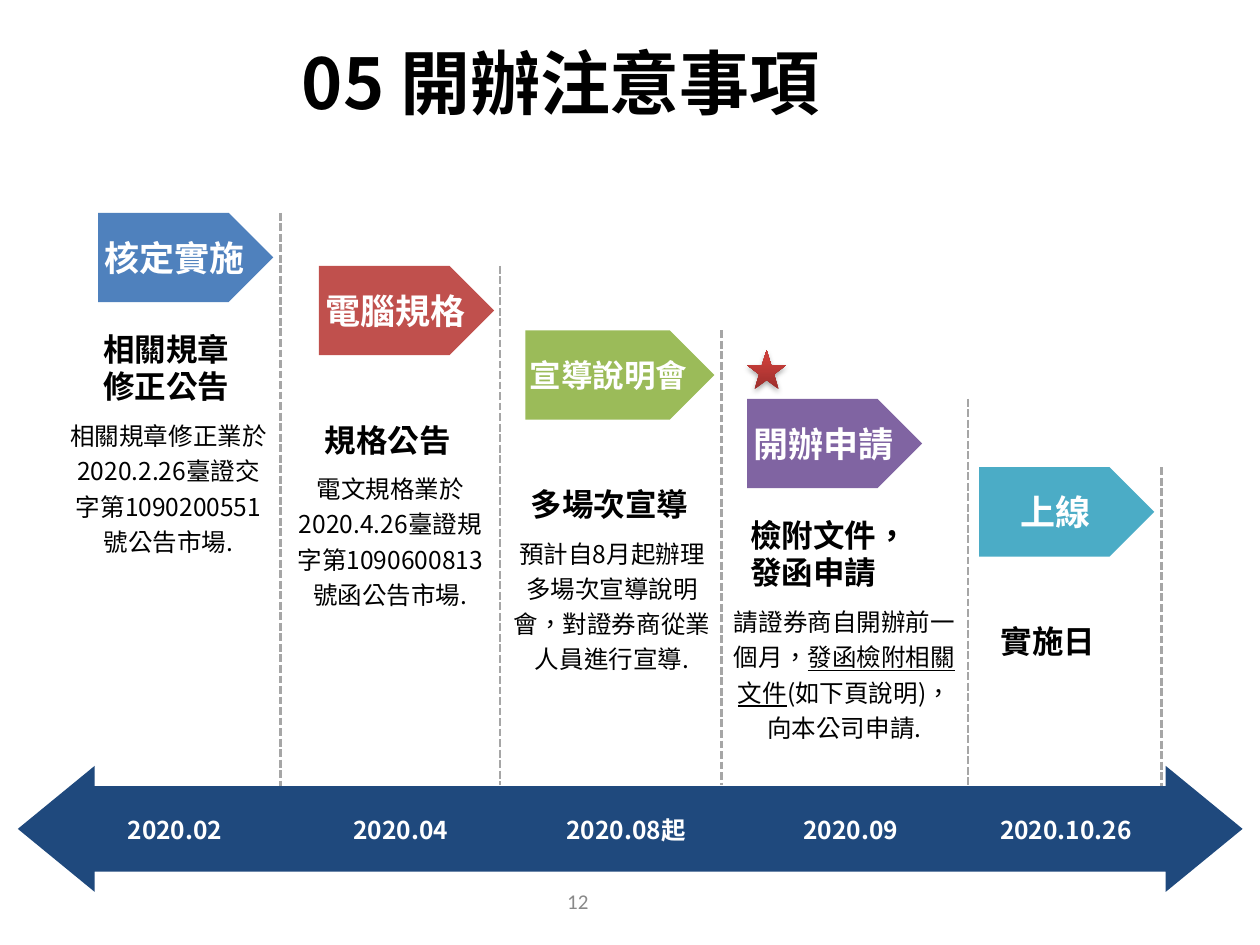
from dataclasses import dataclass, replace

from lxml.etree import SubElement
from pptx import Presentation
from pptx.dml.color import RGBColor
from pptx.enum.dml import MSO_LINE
from pptx.enum.lang import MSO_LANGUAGE_ID
from pptx.enum.shapes import MSO_CONNECTOR, MSO_SHAPE
from pptx.enum.text import MSO_ANCHOR, MSO_AUTO_SIZE, PP_ALIGN
from pptx.oxml.ns import qn
from pptx.util import Cm, Pt

CJK_FONT = "Noto Sans CJK SC"
WHITE, BLACK, NAVY, GREY = "FFFFFF", "000000", "1F497D", "A6A6A6"
ARROW_HEIGHT = 1.8
HEADING_HEIGHT = 2.18
COLUMN_WIDTH = 4.42
DATE_WIDTH = 3.6


@dataclass
class TextStyle:
    size: float
    color: str = BLACK
    bold: bool = False
    align: PP_ALIGN = PP_ALIGN.CENTER
    anchor: MSO_ANCHOR = MSO_ANCHOR.MIDDLE
    wrap: bool = True
    inset: tuple[float, float] = (0.25, 0.13)
    line_spacing: float | None = None
    font: str = CJK_FONT


@dataclass
class Stage:
    label: str
    color: str
    left: float
    top: float
    divider_x: float
    divider_bottom: float
    text_left: float
    heading: list[str]
    date: str
    date_center: float
    body: tuple[str, ...] = ()
    underlined: int | None = None
    body_height: float = 1.96
    body_width: float = COLUMN_WIDTH
    arrow_width: float = 3.53
    label_size: float = 20


STAGES = [
    Stage("核定實施", "4F81BD", 1.98, 4.29, 5.66, 15.9, 1.19, ["相關規章", "修正公告"],
          "2020.02", 3.53, ("相關規章修正業於2020.2.26臺證交字第1090200551號公告市場.",)),
    Stage("電腦規格", "C0504D", 6.43, 5.36, 10.08, 15.82, 5.66, ["規格公告"],
          "2020.04", 8.08, ("電文規格業於2020.4.26臺證規字第1090600813號函公告市場.",),
          body_height=5),
    Stage("宣導說明會", "9BBB59", 10.59, 6.66, 14.55, 15.82, 10.13, ["多場次宣導"],
          "2020.08起", 12.62, ("預計自8月起辦理多場次宣導說明會，對證券商從業人員進行宣導.",),
          arrow_width=3.81, label_size=18),
    Stage("開辦申請", "8064A2", 15.06, 8.04, 19.51, 15.85, 14.55, ["檢附文件，", "發函申請"],
          "2020.09", 17.15,
          ("請證券商自開辦前一個月，", "發函檢附相關文件", "(如下頁說明)，向本公司申請."),
          underlined=1, body_height=3.56, body_width=4.95),
    Stage("上線", "4BACC6", 19.74, 9.42, 23.42, 15.95, 18.97, ["實施日"],
          "2020.10.26", 21.49),
]

SMALL_INSET = (0.18, 0.1)
HEADING = TextStyle(18, bold=True, align=PP_ALIGN.LEFT, anchor=MSO_ANCHOR.BOTTOM)
BODY = TextStyle(14, anchor=MSO_ANCHOR.TOP, inset=SMALL_INSET, line_spacing=1.2)
DATE = TextStyle(14, WHITE, bold=True)
TITLE = TextStyle(40, bold=True)
PAGE_NUMBER = TextStyle(12, "898989", font="Calibri")


def rgb(value: str) -> RGBColor:
    return RGBColor.from_string(value)


def write_text(shape, paragraphs: list[tuple[str, ...]], style: TextStyle,
               underlined: int | None = None) -> None:
    frame = shape.text_frame
    frame.auto_size = MSO_AUTO_SIZE.NONE
    frame.word_wrap = style.wrap
    frame.vertical_anchor = style.anchor
    frame.margin_left = frame.margin_right = Cm(style.inset[0])
    frame.margin_top = frame.margin_bottom = Cm(style.inset[1])
    for number, pieces in enumerate(paragraphs):
        paragraph = frame.add_paragraph() if number else frame.paragraphs[0]
        paragraph.alignment = style.align
        paragraph.line_spacing = style.line_spacing
        font = paragraph.font
        font.size, font.bold, font.name = Pt(style.size), style.bold, style.font
        font.color.rgb = rgb(style.color)
        properties = paragraph._p.pPr
        properties.set("hangingPunct", "0")
        defaults = properties.find(qn("a:defRPr"))
        SubElement(defaults, qn("a:ea")).set("typeface", style.font)
        for position, piece in enumerate(pieces):
            run = paragraph.add_run()
            run.text = piece
            run.font.language_id = MSO_LANGUAGE_ID.TRADITIONAL_CHINESE
            if position == underlined:
                run.font.underline = True


def add_text(slide, left: float, top: float, width: float, height: float,
             paragraphs: list[tuple[str, ...]], style: TextStyle,
             underlined: int | None = None) -> None:
    shape = slide.shapes.add_textbox(Cm(left), Cm(top), Cm(width), Cm(height))
    write_text(shape, paragraphs, style, underlined)


def add_block(slide, kind: MSO_SHAPE, left: float, top: float, width: float,
              height: float, color: str):
    shape = slide.shapes.add_shape(kind, Cm(left), Cm(top), Cm(width), Cm(height))
    shape.shadow.inherit = False
    shape.fill.solid()
    shape.fill.fore_color.rgb = rgb(color)
    shape.line.fill.background()
    return shape


def add_divider(slide, x: float, top: float, bottom: float) -> None:
    line = slide.shapes.add_connector(
        MSO_CONNECTOR.STRAIGHT, Cm(x), Cm(top), Cm(x), Cm(bottom))
    line.line.color.rgb = rgb(GREY)
    line.line.width = Pt(1.5)
    line.line.dash_style = MSO_LINE.SQUARE_DOT
    SubElement(line._element.spPr, qn("a:effectLst"))


def add_heading(slide, stage: Stage, top: float) -> None:
    text_width = max(map(len, stage.heading)) * Pt(HEADING.size).cm
    side_inset = (COLUMN_WIDTH - text_width) / 2 - 0.05
    add_text(slide, stage.text_left, top, COLUMN_WIDTH, HEADING_HEIGHT,
             [(line,) for line in stage.heading],
             replace(HEADING, inset=(side_inset, SMALL_INSET[1])))


def add_stage(slide, stage: Stage) -> None:
    arrow = add_block(slide, MSO_SHAPE.PENTAGON, stage.left, stage.top,
                      stage.arrow_width, ARROW_HEIGHT, stage.color)
    write_text(arrow, [(stage.label,)],
               TextStyle(stage.label_size, WHITE, bold=True, wrap=False, inset=SMALL_INSET))
    add_divider(slide, stage.divider_x, stage.top, stage.divider_bottom)
    heading_top = stage.top + ARROW_HEIGHT
    add_heading(slide, stage, heading_top)
    if stage.body:
        add_text(slide, stage.text_left, heading_top + HEADING_HEIGHT, stage.body_width,
                 stage.body_height, [stage.body], BODY, stage.underlined)


def add_timeline(slide, stages: list[Stage]) -> None:
    timeline = add_block(slide, MSO_SHAPE.LEFT_RIGHT_ARROW, 0.36, 15.44, 24.69, 2.54, NAVY)
    timeline.adjustments[0] = 0.68
    timeline.adjustments[1] = 0.61
    for stage in stages:
        add_text(slide, stage.date_center - DATE_WIDTH / 2, 16.21, DATE_WIDTH, 1.02,
                 [(stage.date,)], DATE)


def add_star(slide) -> None:
    star = add_block(slide, MSO_SHAPE.STAR_5_POINT, 15.06, 7.06, 0.79, 0.79, "CB3E3A")
    star.fill.gradient()
    star.fill.gradient_angle = 90
    for stop, color, position in zip(star.fill.gradient_stops, ("9C2F2D", "CB3E3A"), (0, 0.8)):
        stop.color.rgb = rgb(color)
        stop.position = position
    effects = star._element.spPr.find(qn("a:effectLst"))
    shadow = SubElement(effects, qn("a:outerShdw"), blurRad=str(Pt(3.1)),
                        dist=str(Pt(1.8)), dir="5400000", rotWithShape="0")
    color = SubElement(shadow, qn("a:srgbClr"), val=BLACK)
    SubElement(color, qn("a:alpha"), val="35000")


def main() -> None:
    presentation = Presentation()
    presentation.slide_width, presentation.slide_height = Cm(25.4), Cm(19.05)
    slide = presentation.slides.add_slide(presentation.slide_layouts[6])
    add_text(slide, 8.69, 17.65, 5.92, 1.02, [("12",)], PAGE_NUMBER)
    for stage in STAGES:
        add_stage(slide, stage)
    add_timeline(slide, STAGES)
    add_text(slide, 3.1, 0.76, 16.41, 1.75, [("05 開辦注意事項",)], TITLE)
    add_star(slide)
    presentation.save("out.pptx")


if __name__ == "__main__":
    main()
